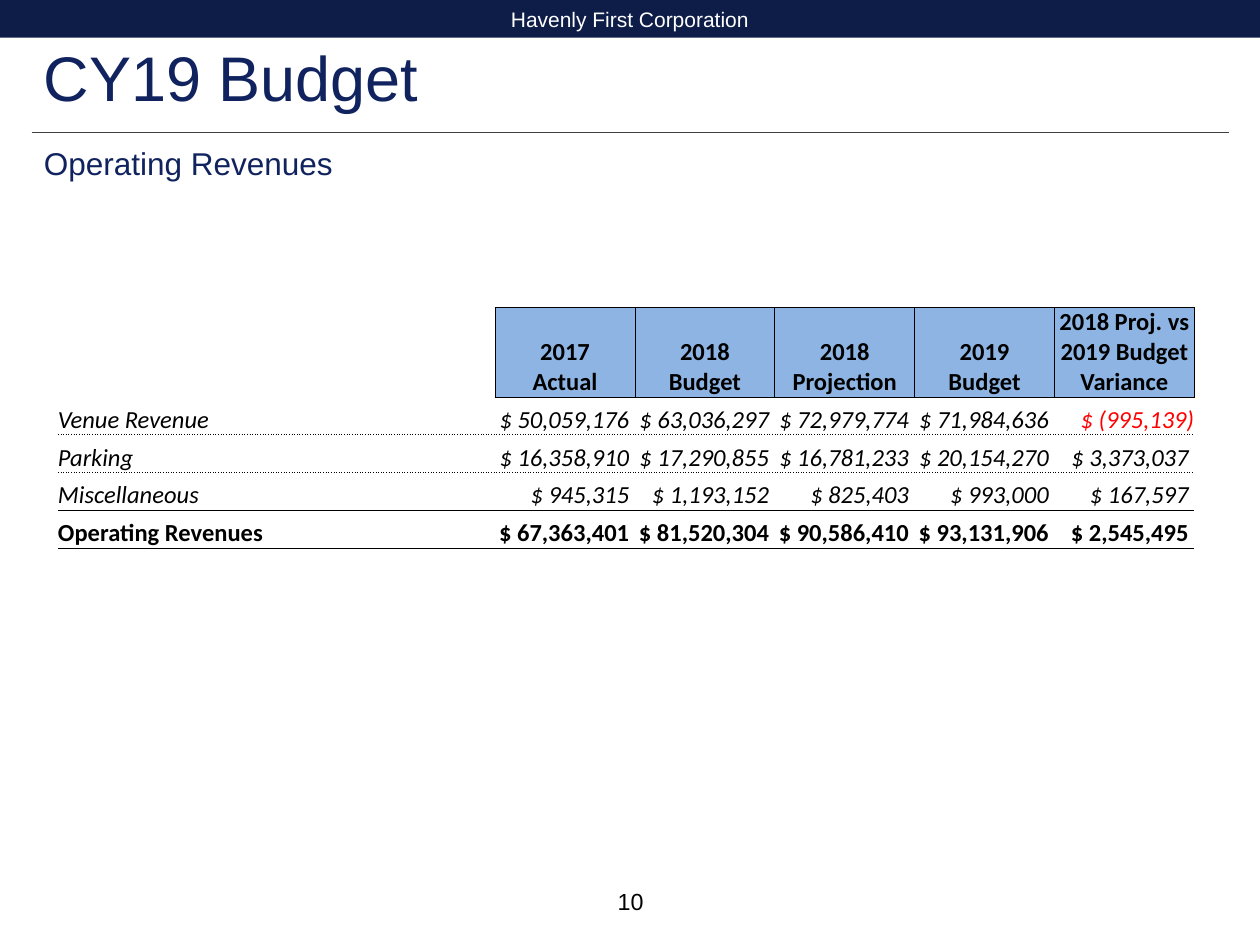
from dataclasses import dataclass

from lxml import etree
from pptx import Presentation
from pptx.dml.color import RGBColor
from pptx.enum.shapes import MSO_CONNECTOR, MSO_SHAPE
from pptx.enum.text import MSO_ANCHOR, PP_ALIGN
from pptx.oxml.ns import qn
from pptx.util import Inches, Pt

LEFT, CENTER, RIGHT = PP_ALIGN.LEFT, PP_ALIGN.CENTER, PP_ALIGN.RIGHT
TOP, MIDDLE, BOTTOM = MSO_ANCHOR.TOP, MSO_ANCHOR.MIDDLE, MSO_ANCHOR.BOTTOM
RECTANGLE, STRAIGHT = MSO_SHAPE.RECTANGLE, MSO_CONNECTOR.STRAIGHT
SOLID, DOTTED = "solid", "sysDot"


@dataclass(frozen=True)
class Theme:
    """Fonts, colours and type sizes of the slide."""
    heading_font: str = "Arial"
    table_font: str = "Calibri"
    banner: str = "0E1C48"
    navy: str = "10235F"
    white: str = "FFFFFF"
    black: str = "000000"
    rule: str = "404040"
    header_fill: str = "8DB4E2"
    negative: str = "FF0000"
    banner_size: float = 12
    title_size: float = 36
    subtitle_size: float = 18
    table_size: float = 14
    page_size: float = 13.3
    hairline: float = 0.5


THEME = Theme()
HEADINGS = [["2017", "Actual"], ["2018", "Budget"], ["2018", "Projection"],
            ["2019", "Budget"], ["2018 Proj. vs 2019 Budget Variance"]]
REVENUES = [
    ("Venue Revenue", [50059176, 63036297, 72979774, 71984636, -995139]),
    ("Parking", [16358910, 17290855, 16781233, 20154270, 3373037]),
    ("Miscellaneous", [945315, 1193152, 825403, 993000, 167597]),
    ("Operating Revenues", [67363401, 81520304, 90586410, 93131906, 2545495]),
]
ROW_RULES = [SOLID, DOTTED, DOTTED, SOLID, SOLID]


def write(frame, lines, size, color, font=THEME.heading_font, align=LEFT, bold=False, italic=False):
    """Write each line as a paragraph with one formatted run."""
    for index, line in enumerate(lines):
        paragraph = frame.add_paragraph() if index else frame.paragraphs[0]
        paragraph.alignment = align
        run = paragraph.add_run()
        run.text = line
        run.font.name, run.font.size = font, Pt(size)
        run.font.bold, run.font.italic = bold, italic
        run.font.color.rgb = RGBColor.from_string(color)


def add_banner(slide, text):
    """Add the dark band across the top of the slide."""
    banner = slide.shapes.add_shape(RECTANGLE, 0, 0, Inches(10), Inches(0.3))
    banner.shadow.inherit = False
    banner.fill.solid()
    banner.fill.fore_color.rgb = RGBColor.from_string(THEME.banner)
    banner.line.fill.background()
    frame = banner.text_frame
    frame.margin_left = frame.margin_right = 0
    frame.vertical_anchor = MIDDLE
    write(frame, [text], THEME.banner_size, THEME.white, align=CENTER)


def add_text(slide, box, text, size, color, align=LEFT, anchor=TOP, wrap=True):
    """Add a one-line text box."""
    frame = slide.shapes.add_textbox(*map(Inches, box)).text_frame
    frame.word_wrap = wrap
    frame.vertical_anchor = anchor
    write(frame, [text], size, color, align=align)


def add_rule(slide, left, right, top):
    """Add a thin horizontal line."""
    rule = slide.shapes.add_connector(STRAIGHT, Inches(left), Inches(top), Inches(right), Inches(top))
    rule.line.color.rgb = RGBColor.from_string(THEME.rule)
    rule.line.width = Pt(THEME.hairline)
    etree.SubElement(rule._element.spPr, qn("a:effectLst"))


def set_borders(cell, **dashes):
    """Draw the edges named L, R, T or B and hide the others."""
    properties = cell._tc.get_or_add_tcPr()
    for edge in "LRTB":
        line = etree.SubElement(properties, qn(f"a:ln{edge}"), w=str(Pt(THEME.hairline)))
        if edge in dashes:
            fill = etree.SubElement(line, qn("a:solidFill"))
            etree.SubElement(fill, qn("a:srgbClr"), val=THEME.black)
            etree.SubElement(line, qn("a:prstDash"), val=dashes[edge])
        else:
            etree.SubElement(line, qn("a:noFill"))


def fill_cell(cell, lines, color=THEME.black, background=None, **style):
    """Set the layout, fill and text of a table cell."""
    cell.margin_left = cell.margin_right = cell.margin_top = cell.margin_bottom = 0
    cell.vertical_anchor = BOTTOM
    if background:
        cell.fill.solid()
        cell.fill.fore_color.rgb = RGBColor.from_string(background)
    else:
        cell.fill.background()
    write(cell.text_frame, lines, THEME.table_size, color, THEME.table_font, **style)


def dollars(amount):
    """Format an amount in accounting style."""
    return f"$ ({-amount:,})" if amount < 0 else f"$ {amount:,} "


def add_revenue_table(slide):
    """Add the table of operating revenues by year."""
    table = slide.shapes.add_table(len(REVENUES) + 1, len(HEADINGS) + 1, Inches(0.46), Inches(2.44),
                                   Inches(9.02), Inches(1.91)).table
    table.first_row = table.horz_banding = False
    for index, column in enumerate(table.columns):
        column.width = Inches(1.11 if index else 3.47)
    for index, row in enumerate(table.rows):
        row.height = Inches(0.3 if index else 0.71)

    corner = table.cell(0, 0)
    set_borders(corner, R=SOLID)
    fill_cell(corner, [])
    for column, heading in enumerate(HEADINGS, 1):
        cell = table.cell(0, column)
        set_borders(cell, L=SOLID, R=SOLID, T=SOLID, B=SOLID)
        fill_cell(cell, heading, background=THEME.header_fill, align=CENTER, bold=True)

    for row, (label, amounts) in enumerate(REVENUES, 1):
        total = row == len(REVENUES)
        for column, value in enumerate([label, *amounts]):
            cell = table.cell(row, column)
            edges = {"T": ROW_RULES[row - 1], "B": ROW_RULES[row]}
            if (row, column) == (1, 0):
                del edges["T"]
            set_borders(cell, **edges)
            negative = column > 0 and value < 0
            fill_cell(cell, [dollars(value) if column else value],
                      THEME.negative if negative else THEME.black,
                      align=RIGHT if column else LEFT, bold=total, italic=not total)


def main():
    """Build and save the budget slide."""
    deck = Presentation()
    deck.slide_width, deck.slide_height = Inches(10), Inches(7.5)
    slide = deck.slides.add_slide(deck.slide_layouts[6])
    add_banner(slide, "Havenly First Corporation")
    add_revenue_table(slide)
    add_text(slide, (3.88, 6.95, 2.25, 0.4), "10", THEME.page_size, THEME.black, CENTER, MIDDLE)
    add_text(slide, (0.25, 0.26, 3.2, 0.71), "CY19 Budget", THEME.title_size, THEME.navy, wrap=False)
    add_rule(slide, 0.25, 9.75, 1.05)
    add_text(slide, (0.25, 1.09, 9.47, 0.36), "Operating Revenues", THEME.subtitle_size, THEME.navy)
    deck.save("out.pptx")


if __name__ == "__main__":
    main()
